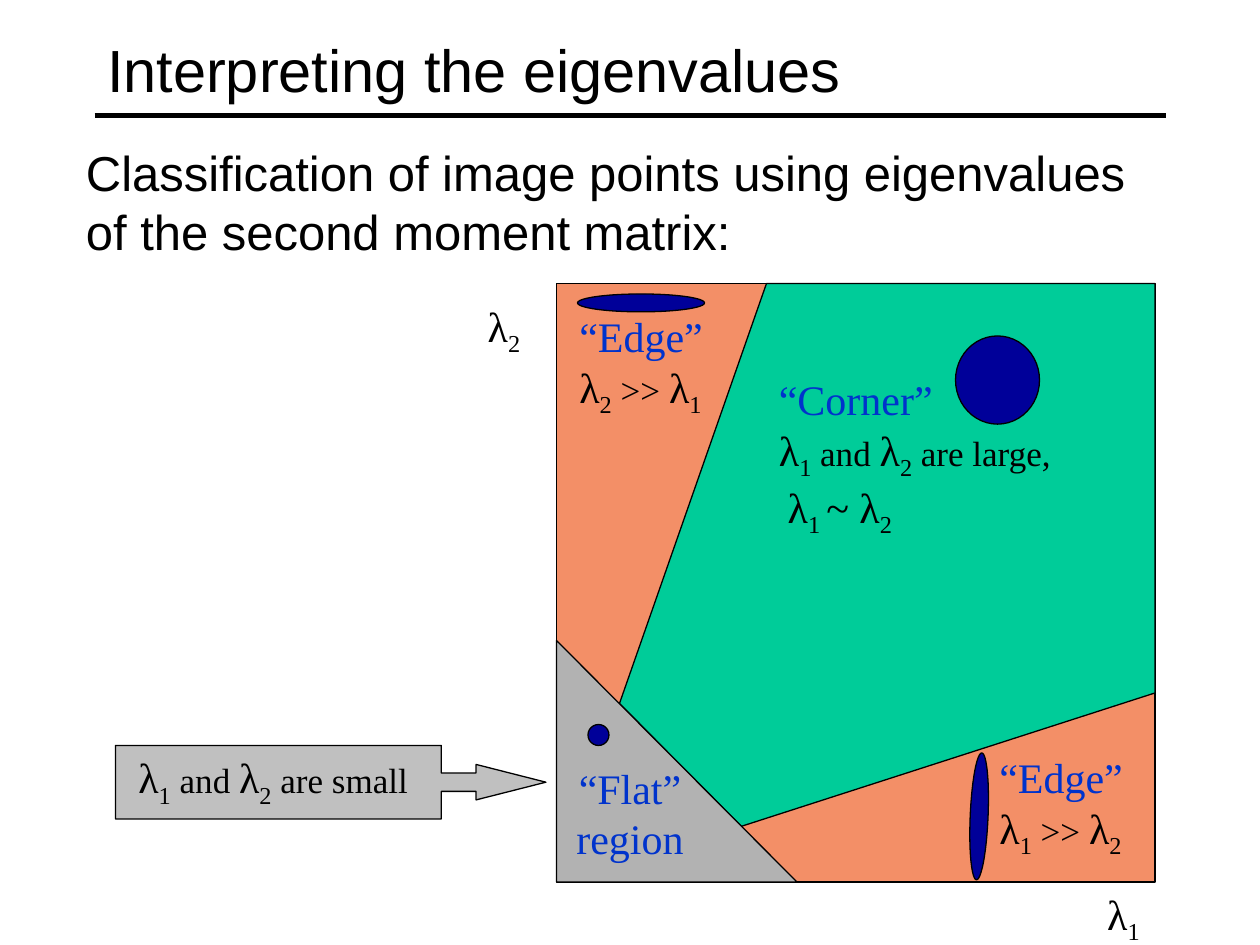
from dataclasses import dataclass

from lxml import etree
from pptx import Presentation
from pptx.dml.color import RGBColor
from pptx.enum.shapes import MSO_CONNECTOR, MSO_SHAPE
from pptx.enum.text import MSO_ANCHOR, MSO_AUTO_SIZE, PP_ALIGN
from pptx.oxml.ns import qn
from pptx.util import Pt

PX = 7620
LEFT, CENTER = PP_ALIGN.LEFT, PP_ALIGN.CENTER
MIDDLE, TOP = MSO_ANCHOR.MIDDLE, MSO_ANCHOR.TOP
NO_FIT, GROW = MSO_AUTO_SIZE.NONE, MSO_AUTO_SIZE.SHAPE_TO_FIT_TEXT
CALLOUT, RECTANGLE = MSO_SHAPE.RIGHT_ARROW_CALLOUT, MSO_SHAPE.RECTANGLE
TRIANGLE, OVAL = MSO_SHAPE.RIGHT_TRIANGLE, MSO_SHAPE.OVAL
STRAIGHT = MSO_CONNECTOR.STRAIGHT


@dataclass(frozen=True)
class Theme:
    ink: str = "000000"
    label: str = "0033CC"
    callout: str = "C0C0C0"
    edge: str = "F38F67"
    corner: str = "00CC99"
    flat: str = "B2B2B2"
    ellipse: str = "000099"
    sans: str = "Arial"
    serif: str = "Times New Roman"
    title_size: int = 34
    body_size: int = 28
    symbol_size: int = 24
    word_size: int = 20
    outline: float = 0.75
    rule: int = 3


theme = Theme()
STYLES = {
    "title": (theme.sans, theme.title_size, theme.ink),
    "body": (theme.sans, theme.body_size, theme.ink),
    "label": (theme.serif, theme.symbol_size, theme.label),
    "symbol": (theme.serif, theme.symbol_size, theme.ink),
    "sub": (theme.serif, theme.symbol_size, theme.ink),
    "word": (theme.serif, theme.word_size, theme.ink),
}
LAMBDA_1 = [("λ", "symbol"), ("1", "sub")]
LAMBDA_2 = [("λ", "symbol"), ("2", "sub")]
BOTH = LAMBDA_1 + [(" and ", "word")] + LAMBDA_2


def write_text(box, lines, align, anchor, fit):
    frame = box.text_frame
    for name, value in {"word_wrap": True, "auto_size": fit, "vertical_anchor": anchor}.items():
        setattr(frame, name, value)
    para = frame.paragraphs[0]
    para.alignment = align
    for index, line in enumerate(lines):
        if index:
            para.add_line_break()
        for text, style in line:
            family, size, color = STYLES[style]
            span = para.add_run()
            span.text = text
            for name, value in {"name": family, "size": Pt(size), "bold": False}.items():
                setattr(span.font, name, value)
            span.font.color.rgb = RGBColor.from_string(color)
            if style == "sub":
                span.font._element.set("baseline", "-25000")


def paint(shape, fill):
    shape.shadow.inherit = False
    shape.fill.solid()
    shape.fill.fore_color.rgb = RGBColor.from_string(fill)
    shape.line.color.rgb = RGBColor.from_string(theme.ink)
    shape.line.width = Pt(theme.outline)


deck = Presentation()
deck.slide_width, deck.slide_height = 1200 * PX, 900 * PX
page = deck.slides.add_slide(deck.slide_layouts[5])

title = page.shapes.title
for name, value in {"left": 90, "top": 10, "width": 1020, "height": 110}.items():
    setattr(title, name, value * PX)
write_text(title, [[("Interpreting the eigenvalues", "title")]], LEFT, MIDDLE, NO_FIT)

rule = page.shapes.add_connector(STRAIGHT, 90 * PX, 110 * PX, 1110 * PX, 110 * PX)
rule.line.color.rgb = RGBColor.from_string(theme.ink)
rule.line.width = Pt(theme.rule)
etree.SubElement(rule._element.spPr, qn("a:effectLst"))

corner_points = [(590, 670), (730, 270), (1100, 270), (1100, 660), (706, 787)]
builder = page.shapes.build_freeform(*corner_points[0], scale=PX)
builder.add_line_segments(corner_points[1:], close=True)
corner_region = builder.convert_to_shape()
paint(corner_region, theme.corner)

SHAPES = [
    (CALLOUT, (110, 710, 410, 70), theme.callout, 0, (0.25, 0.241, 0.95, 0.757)),
    (RECTANGLE, (530, 270, 570, 570), theme.edge, 0, ()),
    (TRIANGLE, (530, 610, 229, 230), theme.flat, 0, ()),
    (OVAL, (910, 320, 80, 84), theme.ellipse, 0, ()),
    (OVAL, (550, 280, 121, 17), theme.ellipse, 0, ()),
    (OVAL, (560, 690, 20, 20), theme.ellipse, 0, ()),
    (OVAL, (872, 769, 121, 17), theme.ellipse, 92.4, ()),
]
for kind, bounds, fill, rotation, adjustments in SHAPES:
    shape = page.shapes.add_shape(kind, *(value * PX for value in bounds))
    paint(shape, fill)
    shape.rotation = rotation
    for index, value in enumerate(adjustments):
        shape.adjustments[index] = value
    if kind == RECTANGLE:
        corner_region._element.addprevious(shape._element)

TEXTS = [
    ((1020, 840, 100, 60), CENTER, [LAMBDA_1]),
    ((410, 280, 140, 60), CENTER, [LAMBDA_2]),
    ((730, 350, 350, 156), LEFT, [
        [("“Corner”", "label")],
        BOTH + [(" are large,", "word")],
        [(" ", "word"), ("λ", "symbol"), ("1 ", "sub"), ("~ λ", "symbol"), ("2", "sub")],
    ]),
    ((120, 710, 310, 60), LEFT, [BOTH + [(" are small", "word")]]),
    ((940, 710, 170, 108), LEFT, [
        [("“Edge”", "label")], LAMBDA_1 + [(" >> ", "word")] + LAMBDA_2]),
    ((540, 290, 170, 108), LEFT, [
        [("“Edge”", "label")], LAMBDA_2 + [(" >> ", "word")] + LAMBDA_1]),
    ((520, 720, 160, 108), CENTER, [[("“Flat” region", "label")]]),
    ((70, 130, 1050, 124), LEFT, [[(
        "Classification of image points using eigenvalues of the second moment matrix:", "body")]]),
]
for bounds, align, lines in TEXTS:
    box = page.shapes.add_textbox(*(value * PX for value in bounds))
    write_text(box, lines, align, TOP, GROW)

deck.save("out.pptx")
